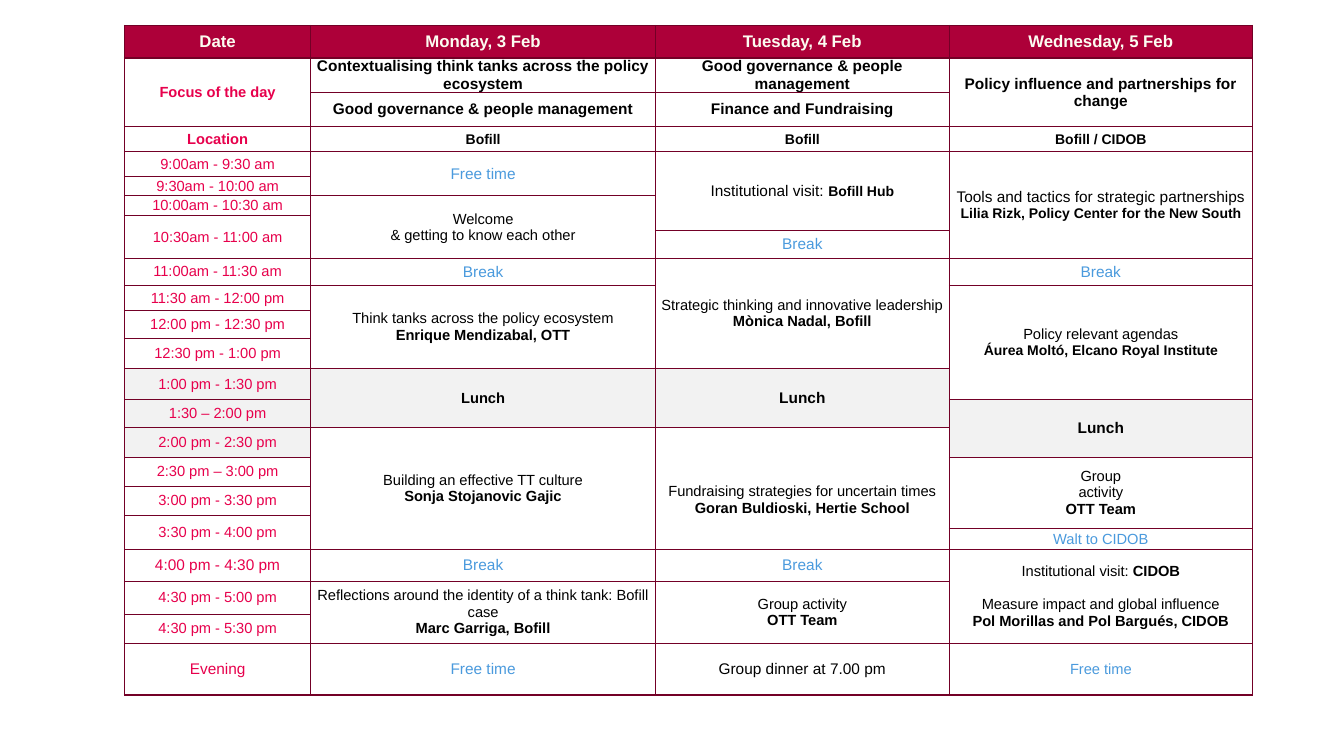
from lxml import etree
from pptx import Presentation
from pptx.dml.color import RGBColor
from pptx.enum.text import MSO_ANCHOR as Anchor, PP_ALIGN as Align
from pptx.oxml import parse_xml
from pptx.oxml.ns import nsdecls
from pptx.util import Pt

CRIMSON, PINK, BLUE = "AD0039", "E7004C", "4A9ADD"
BLACK, WHITE, CREAM, GREY, BORDER = "000000", "FFFFFF", "FCFCF1", "F2F2F2", "730026"


def rgb(color):
    return RGBColor.from_string(color)


def fill_slot(row, column, row_count, lines, color=BLACK, background=WHITE):
    """Merge row_count rows and write lines of (text, size, bold) runs."""
    cell = agenda.cell(row, column)
    if row_count > 1:
        cell.merge(agenda.cell(row + row_count - 1, column))
    cell.fill.solid()
    cell.fill.fore_color.rgb = rgb(background)
    for index, line in enumerate(lines):
        frame = cell.text_frame
        para = frame.add_paragraph() if index else frame.paragraphs[0]
        para.alignment = Align.CENTER
        for text, size, bold in line:
            if text == "\n":
                para.add_line_break()
                continue
            span = para.add_run()
            span.text = text
            span.font.name = "Arial"
            span.font.size = Pt(size)
            span.font.bold = bold
            span.font.color.rgb = rgb(color)
    return cell


deck = Presentation()
deck.slide_width, deck.slide_height = Pt(960), Pt(540)
page = deck.slides.add_slide(deck.slide_layouts[6])

column_widths = [133.2, 246.1, 210, 216.4]
row_heights = [23.2, 24.6, 24.6, 17.9, 17.9, 13.6, 14.3, 10.4, 20, 19.3, 18.2, 19.6,
               21.8, 21.8, 20, 21.4, 20.7, 20.7, 9.3, 15.4, 22.5, 23.6, 20.7, 37.1]
agenda = page.shapes.add_table(
    len(row_heights), len(column_widths), Pt(88.9), Pt(18.2),
    Pt(sum(column_widths)), Pt(sum(row_heights))).table
agenda.first_row = agenda.horz_banding = False
for column, width in zip(agenda.columns, column_widths):
    column.width = Pt(width)
for row, height in zip(agenda.rows, row_heights):
    row.height = Pt(height)

for cell in agenda.iter_cells():
    cell.margin_left = cell.margin_right = cell.margin_top = cell.margin_bottom = 0
    cell.vertical_anchor = Anchor.MIDDLE
    cell.fill.solid()
    cell.fill.fore_color.rgb = rgb(WHITE)
    for position, side in enumerate(["lnL", "lnR", "lnT", "lnB"]):
        cell_properties = cell._tc.get_or_add_tcPr()
        cell_properties.insert(position, parse_xml(
            f'<a:{side} {nsdecls("a")} w="{Pt(1)}"><a:solidFill>'
            f'<a:srgbClr val="{BORDER}"/></a:solidFill></a:{side}>'))

headings = ["Date", "Monday, 3 Feb", "Tuesday, 4 Feb", "Wednesday, 5 Feb"]
for column, heading in enumerate(headings):
    fill_slot(0, column, 1, [[(heading, 12, True)]], CREAM, CRIMSON)

# First column: row, rows covered, label, size, bold, background
row_labels = [
    (1, 2, "Focus of the day", 10.5, True, WHITE),
    (3, 1, "Location", 10.5, True, WHITE),
    (4, 1, "9:00am - 9:30 am", 10.5, False, WHITE),
    (5, 1, "9:30am - 10:00 am", 10.5, False, WHITE),
    (6, 1, "10:00am - 10:30 am", 10.5, False, WHITE),
    (7, 2, "10:30am - 11:00 am", 10.5, False, WHITE),
    (9, 1, "11:00am - 11:30 am", 10.5, False, WHITE),
    (10, 1, "11:30 am - 12:00 pm", 10.5, False, WHITE),
    (11, 1, "12:00 pm - 12:30 pm", 10.5, False, WHITE),
    (12, 1, "12:30 pm - 1:00 pm", 10.5, False, WHITE),
    (13, 1, "1:00 pm - 1:30 pm", 10.5, False, GREY),
    (14, 1, "1:30 – 2:00 pm", 10.5, False, GREY),
    (15, 1, "2:00 pm - 2:30 pm", 10.5, False, GREY),
    (16, 1, "2:30 pm – 3:00 pm", 10.5, False, WHITE),
    (17, 1, "3:00 pm - 3:30 pm", 10.5, False, WHITE),
    (18, 2, "3:30 pm - 4:00 pm", 10.5, False, WHITE),
    (20, 1, "4:00 pm - 4:30 pm", 11, False, WHITE),
    (21, 1, "4:30 pm - 5:00 pm", 10.5, False, WHITE),
    (22, 1, "4:30 pm - 5:30 pm", 10.5, False, WHITE),
    (23, 1, "Evening", 11, False, WHITE),
]
for row, row_count, label, size, bold, background in row_labels:
    fill_slot(row, 0, row_count, [[(label, size, bold)]], PINK, background)

# Single-line slots: row, column, rows covered, text, size, bold, color, background
short_slots = [
    (1, 1, 1, "Contextualising think tanks across the policy ecosystem", 11, True, BLACK, WHITE),
    (1, 2, 1, "Good governance & people management", 11, True, BLACK, WHITE),
    (1, 3, 2, "Policy influence and partnerships for change", 11, True, BLACK, WHITE),
    (2, 1, 1, "Good governance & people management", 11, True, BLACK, WHITE),
    (2, 2, 1, "Finance and Fundraising", 11, True, BLACK, WHITE),
    (3, 1, 1, "Bofill", 10, True, BLACK, WHITE),
    (3, 2, 1, "Bofill", 10, True, BLACK, WHITE),
    (3, 3, 1, "Bofill / CIDOB", 10, True, BLACK, WHITE),
    (4, 1, 2, "Free time", 11, False, BLUE, WHITE),
    (8, 2, 1, "Break", 11, False, BLUE, WHITE),
    (9, 1, 1, "Break", 11, False, BLUE, WHITE),
    (9, 3, 1, "Break", 11, False, BLUE, WHITE),
    (13, 1, 2, "Lunch", 10.5, True, BLACK, GREY),
    (13, 2, 2, "Lunch", 11, True, BLACK, GREY),
    (14, 3, 2, "Lunch", 11, True, BLACK, GREY),
    (19, 3, 1, "Walt to CIDOB", 10.5, False, BLUE, WHITE),
    (20, 1, 1, "Break", 11, False, BLUE, WHITE),
    (20, 2, 1, "Break", 11, False, BLUE, WHITE),
    (23, 1, 1, "Free time", 11, False, BLUE, WHITE),
    (23, 2, 1, "Group dinner at 7.00 pm", 11, False, BLACK, WHITE),
    (23, 3, 1, "Free time", 10.5, False, BLUE, WHITE),
]
for row, column, row_count, text, size, bold, color, background in short_slots:
    fill_slot(row, column, row_count, [[(text, size, bold)]], color, background)

# Sessions: row, column, rows covered, topic, topic size, host, host size
sessions = [
    (4, 3, 5, "Tools and tactics for strategic partnerships", 11,
     "Lilia Rizk, Policy Center for the New South", 10),
    (9, 2, 4, "Strategic thinking and innovative leadership", 10.5, "Mònica Nadal, Bofill", 10.5),
    (10, 1, 3, "Think tanks across the policy ecosystem", 10.5, "Enrique Mendizabal, OTT", 10.5),
    (10, 3, 4, "Policy relevant agendas", 10.5, "Áurea Moltó, Elcano Royal Institute", 10),
    (15, 1, 5, "Building an effective TT culture", 10.5, "Sonja Stojanovic Gajic", 10.5),
    (15, 2, 5, "Fundraising strategies for uncertain times", 10.5,
     "Goran Buldioski, Hertie School", 10.5),
    (21, 1, 2, "Reflections around the identity of a think tank: Bofill case", 10.5,
     "Marc Garriga, Bofill", 10.5),
    (21, 2, 2, "Group activity", 10.5, "OTT Team", 10.5),
]
for row, column, row_count, topic, topic_size, host, host_size in sessions:
    fill_slot(row, column, row_count, [[(topic, topic_size, False)], [(host, host_size, True)]])

fundraising = agenda.cell(15, 2)
fundraising.vertical_anchor = Anchor.BOTTOM
fundraising.margin_bottom = Pt(24)

fill_slot(4, 2, 4, [[("Institutional visit: ", 11, False), ("Bofill Hub", 10, True)]])
fill_slot(6, 1, 3, [[("Welcome", 10.5, False), ("\n", 10.5, False),
                     ("& getting to know each other", 10.5, False)]])
fill_slot(16, 3, 3, [[("Group", 10.5, False)], [("activity", 10.5, False)],
                     [("OTT Team", 10.5, True)]])
closing_visit = fill_slot(20, 3, 3, [
    [("Institutional visit: ", 10.5, False), ("CIDOB", 10.5, True)],
    [("Measure impact and global influence", 10.5, False)],
    [("Pol Morillas and Pol Bargués, CIDOB", 10.5, True)]])
closing_visit.text_frame.paragraphs[1].space_before = Pt(12)

deck.save("out.pptx")
